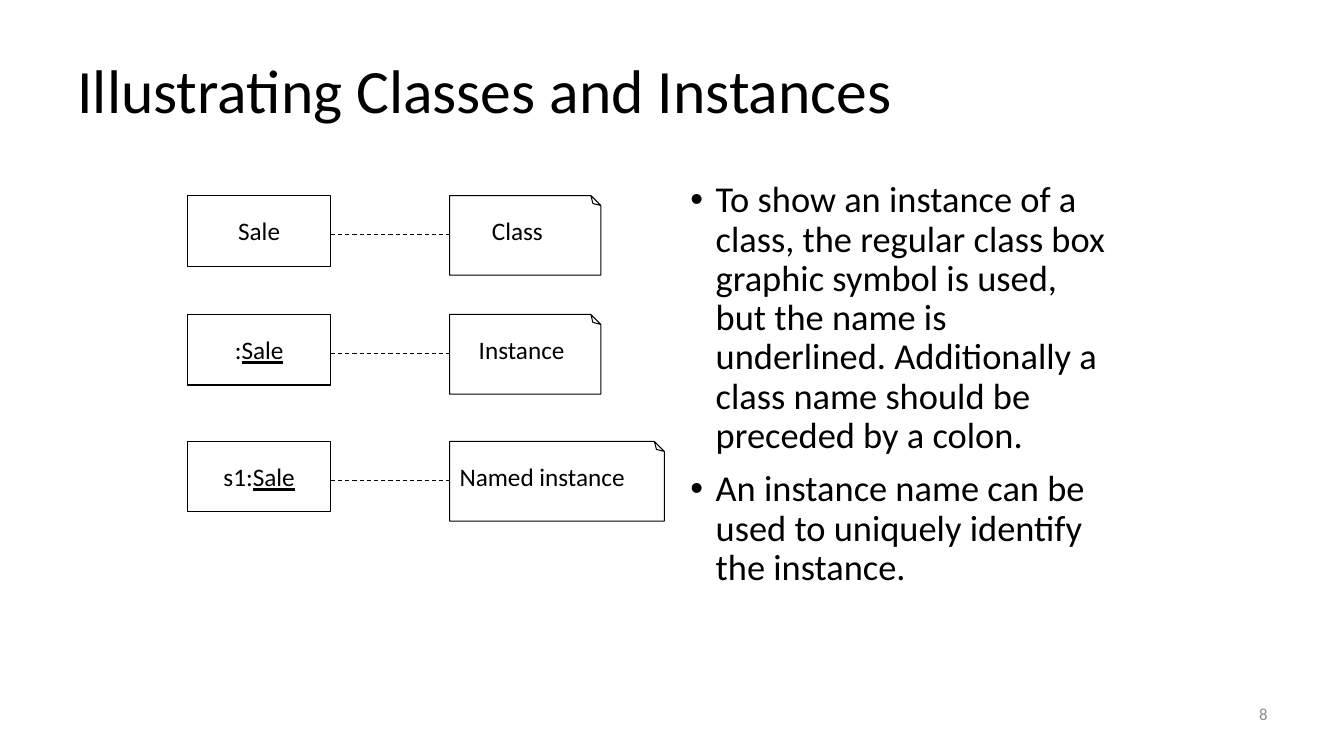
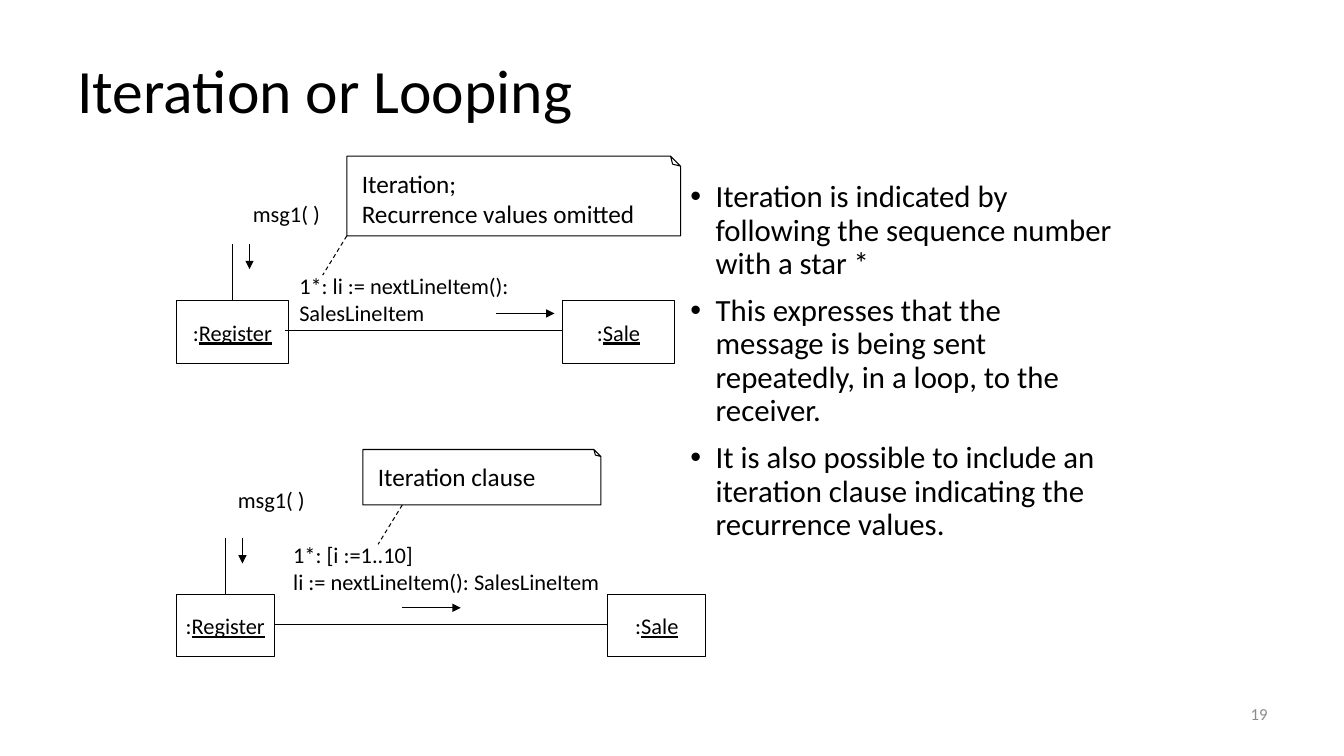
import pptx
import pptx.dml.color
import pptx.enum.dml
import pptx.enum.shapes
import pptx.enum.text
import pptx.oxml.ns
import pptx.util
from lxml import etree

Inches = pptx.util.Inches
Pt = pptx.util.Pt
ALIGN = pptx.enum.text.PP_ALIGN
ANCHOR = pptx.enum.text.MSO_ANCHOR
SHAPE = pptx.enum.shapes.MSO_SHAPE
qn = pptx.oxml.ns.qn

FONT = "Calibri"
INK = "000000"
PAPER = "FFFFFF"
MUTED = "8C8C8C"
LINE_WIDTH = 0.75


def rgb(value):
    return pptx.dml.color.RGBColor.from_string(value)


def format_runs(frame, size, color=INK):
    for paragraph in frame.paragraphs:
        for run in paragraph.runs:
            run.font.name = FONT
            run.font.size = Pt(size)
            run.font.color.rgb = rgb(color)


def outline(line, dashed=False):
    line.color.rgb = rgb(INK)
    line.width = Pt(LINE_WIDTH)
    if dashed:
        line.dash_style = pptx.enum.dml.MSO_LINE.DASH


def add_text(slide, box, text, size, color=INK, anchor=ANCHOR.TOP):
    """Add a wrapping text box and return its frame."""
    frame = slide.shapes.add_textbox(*map(Inches, box)).text_frame
    frame.word_wrap = True
    frame.vertical_anchor = anchor
    frame.text = text
    format_runs(frame, size, color)
    return frame


def add_label(slide, box, text, size):
    """Add text that keeps its own line breaks."""
    frame = add_text(slide, box, text, size)
    frame.word_wrap = False
    frame.auto_size = pptx.enum.text.MSO_AUTO_SIZE.SHAPE_TO_FIT_TEXT


def add_bullets(slide, items, size):
    frame = add_text(slide, (6.75, 1.75, 4.41, 4.95), "\n".join(items), size)
    for paragraph in frame.paragraphs:
        paragraph.line_spacing = 0.9
        paragraph.space_before = Pt(10)
        properties = paragraph._p.get_or_add_pPr()
        properties.set("marL", str(Inches(0.25)))
        properties.set("indent", str(-Inches(0.25)))
        etree.SubElement(properties, qn("a:buFont"), typeface="Arial")
        etree.SubElement(properties, qn("a:buChar"), char="•")


def add_page(deck, title, number, bullets, bullet_size):
    """Add a slide with the shared title, bullet column and page number."""
    slide = deck.slides.add_slide(deck.slide_layouts[6])
    heading = add_text(slide, (0.67, 0.3, 12, 1.25), title, 44, anchor=ANCHOR.MIDDLE)
    heading.paragraphs[0].line_spacing = 0.9
    footer = add_text(slide, (9.56, 6.83, 3.11, 0.5), str(number), 12, MUTED, ANCHOR.MIDDLE)
    footer.paragraphs[0].alignment = ALIGN.RIGHT
    add_bullets(slide, bullets, bullet_size)
    return slide


def add_class_box(slide, box, prefix, name, size, underlined=True):
    class_box = slide.shapes.add_shape(SHAPE.RECTANGLE, *map(Inches, box))
    class_box.shadow.inherit = False
    class_box.fill.solid()
    class_box.fill.fore_color.rgb = rgb(PAPER)
    outline(class_box.line)
    frame = class_box.text_frame
    frame.word_wrap = False
    frame.vertical_anchor = ANCHOR.MIDDLE
    paragraph = frame.paragraphs[0]
    paragraph.text = prefix
    paragraph.alignment = ALIGN.CENTER
    name_run = paragraph.add_run()
    name_run.text = name
    format_runs(frame, size)
    if underlined:
        name_run.font.underline = True


def add_note(slide, box, text, text_box):
    """Add a note whose folded corner is at the top right."""
    note = slide.shapes.add_shape(SHAPE.FOLDED_CORNER, *map(Inches, box))
    note.shadow.inherit = False
    note.fill.background()
    outline(note.line)
    properties = note._element.spPr
    properties.find(qn("a:xfrm")).set("flipV", "1")
    fold = properties.find(qn("a:prstGeom")).find(qn("a:avLst"))
    etree.SubElement(fold, qn("a:gd"), name="adj", fmla="val 12500")
    add_label(slide, text_box, text, 18)


def add_line(slide, start, end, dashed=False, arrow=False):
    line = slide.shapes.add_connector(
        pptx.enum.shapes.MSO_CONNECTOR.STRAIGHT, *map(Inches, (*start, *end)))
    outline(line.line, dashed)
    properties = line._element.spPr
    if arrow:
        etree.SubElement(properties.find(qn("a:ln")), qn("a:tailEnd"), type="triangle")
    etree.SubElement(properties, qn("a:effectLst"))


def add_class_row(slide, top, prefix, name, underlined, note_width, meaning, text_left, text_width):
    """Add a class box tied to the note that explains it."""
    box_left, box_width, note_left = 1.86, 1.42, 4.46
    link_y = top + 0.39
    add_class_box(slide, (box_left, top, box_width, 0.7), prefix, name, 18, underlined)
    add_note(slide, (note_left, top, note_width, 0.79), meaning,
             (text_left, top + 0.15, text_width, 0.4))
    add_line(slide, (box_left + box_width, link_y), (note_left, link_y), dashed=True)


def add_collaboration(slide, top, box_size, sale_left, link_left, msg_at,
                      message, message_box, arrow_at):
    """Add a register that receives msg1 and sends a message to a sale."""
    width, height = box_size
    register_left = 1.75
    stem_x = register_left + width / 2
    stem_top = top - 0.56
    msg_x = stem_x + 0.17
    link_y = top + 0.3
    arrow_x, arrow_y = arrow_at

    add_class_box(slide, (register_left, top, width, height), ":", "Register", 16)
    add_class_box(slide, (sale_left, top, width, height), ":", "Sale", 16)
    add_line(slide, (stem_x, top), (stem_x, stem_top))
    add_line(slide, (msg_x, stem_top), (msg_x, stem_top + 0.25), arrow=True)
    add_label(slide, (*msg_at, 0.88, 0.37), "msg1( )", 16)
    add_line(slide, (link_left, link_y), (sale_left, link_y))
    add_label(slide, message_box, message, 16)
    add_line(slide, (arrow_x, arrow_y), (arrow_x + 0.58, arrow_y), arrow=True)


def add_message_note(slide, box, text, text_size, tie_x):
    """Add a note with a dashed tie running down to its message."""
    left, top, _, height = box
    bottom = top + height
    add_note(slide, box, text, (left + 0.05, top + 0.07, *text_size))
    add_line(slide, (tie_x, bottom), (tie_x - 0.24, bottom + 0.39), dashed=True)


def build_classes_slide(deck):
    slide = add_page(deck, "Illustrating Classes and Instances", 8, [
        "To show an instance of a class, the regular class box graphic symbol is used, "
        "but the name is underlined. Additionally a class name should be preceded by a colon.",
        "An instance name can be used to uniquely identify the instance.",
    ], 26)
    for row in (
        (1.94, "", "Sale", False, 1.5, "Class", 4.78, 0.71),
        (3.12, ":", "Sale", True, 1.5, "Instance", 4.65, 1.06),
        (4.38, "s1:", "Sale", True, 2.13, "Named instance", 4.46, 1.86),
    ):
        add_class_row(slide, *row)


def build_iteration_slide(deck):
    slide = add_page(deck, "Iteration or Looping", 19, [
        "Iteration is indicated by following the sequence number with a star *",
        "This expresses that the message is being sent repeatedly, in a loop, to the receiver.",
        "It is also possible to include an iteration clause indicating the recurrence values.",
    ], 22)
    add_collaboration(
        slide, top=2.98, box_size=(1.11, 0.63), sale_left=5.58, link_left=2.83,
        msg_at=(2.41, 1.94), message="1*: li := nextLineItem():\nSalesLineItem",
        message_box=(2.87, 2.65, 2.3, 0.64), arrow_at=(4.92, 3.11))
    add_message_note(slide, (3.44, 1.55, 3.31, 0.79),
                     "Iteration;\nRecurrence values omitted", (2.94, 0.71), tie_x=3.44)
    add_collaboration(
        slide, top=5.9, box_size=(0.97, 0.61), sale_left=6.03, link_left=2.72,
        msg_at=(2.26, 4.77), message="1*: [i :=1..10]\nli := nextLineItem(): SalesLineItem",
        message_box=(2.81, 5.32, 3.27, 0.64), arrow_at=(3.99, 6.03))
    add_message_note(slide, (3.6, 4.46, 2.36, 0.55),
                     "Iteration clause", (1.78, 0.4), tie_x=3.99)


def main():
    deck = pptx.Presentation()
    deck.slide_width = Inches(13.33)
    deck.slide_height = Inches(7.5)
    build_classes_slide(deck)
    build_iteration_slide(deck)
    deck.save("out.pptx")


if __name__ == "__main__":
    main()
